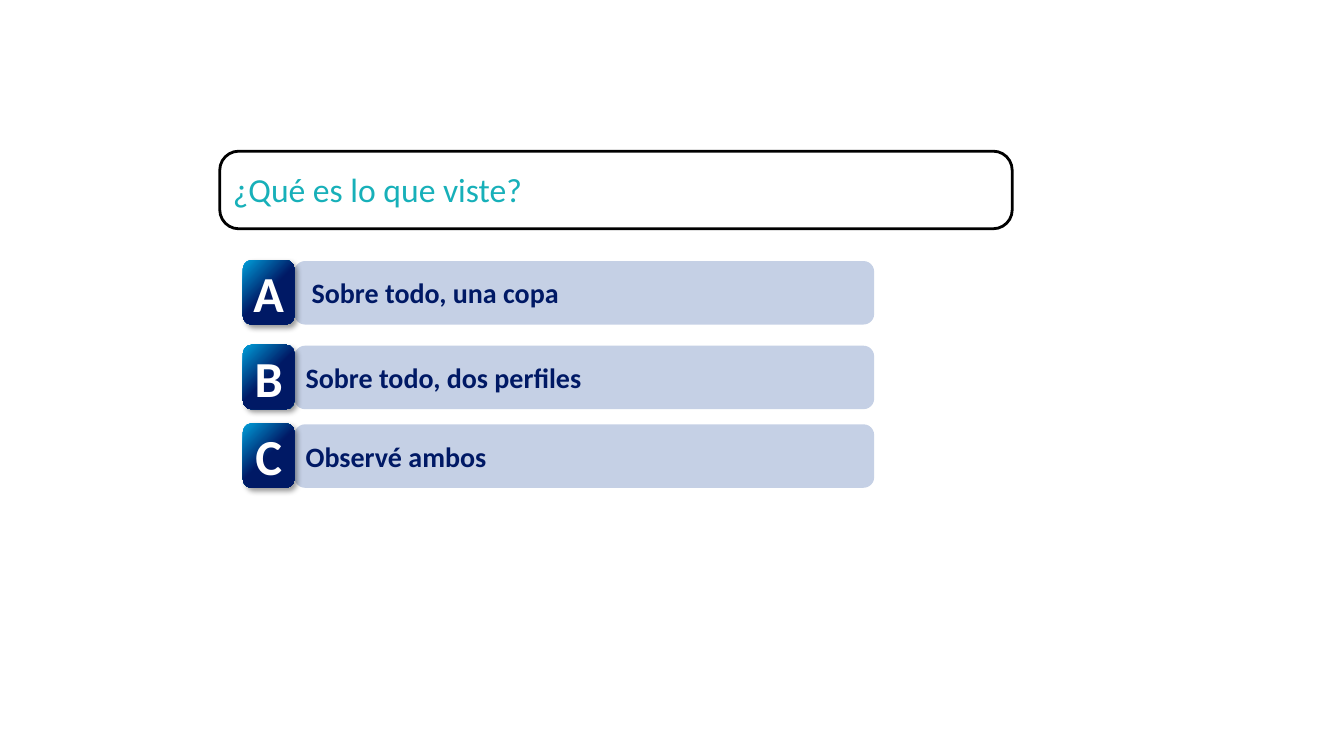
import pptx
import pptx.dml.color
import pptx.enum.shapes
import pptx.enum.text
import pptx.oxml
import pptx.oxml.ns
import pptx.util

INCH = pptx.util.Inches
ALIGN = pptx.enum.text.PP_ALIGN
NAVY = "001965"
ASK = {"size": pptx.util.Pt(24), "bold": False}
REPLY = {"size": pptx.util.Pt(20), "bold": True}
LETTER = {"size": pptx.util.Pt(36), "bold": True}
ROWS = [
    # letter, reply, top, left inset of the reply
    ("A", "Sobre todo, una copa", 2.58, 0.14),
    ("B", "Sobre todo, dos perfiles", 3.42, 0.08),
    ("C", "Observé ambos", 4.2, 0.08),
]
SHADOW = (
    '<a:effectLst %s><a:outerShdw blurRad="50800" dist="38100" dir="2700000" '
    'algn="tl" rotWithShape="0"><a:srgbClr val="000000"><a:alpha val="40000"/>'
    "</a:srgbClr></a:outerShdw></a:effectLst>" % pptx.oxml.ns.nsdecls("a")
)


def color(code):
    return pptx.dml.color.RGBColor.from_string(code)


def write(shape, text, look, code, align=ALIGN.LEFT, left=0):
    frame = shape.text_frame
    frame.text = text
    form = {
        "word_wrap": True,
        "auto_size": pptx.enum.text.MSO_AUTO_SIZE.NONE,
        "vertical_anchor": pptx.enum.text.MSO_ANCHOR.MIDDLE,
        "margin_left": INCH(left),
        "margin_right": 0,
        "margin_top": 0,
        "margin_bottom": 0,
    }
    for name, value in form.items():
        setattr(frame, name, value)
    para = frame.paragraphs[0]
    para.alignment = align
    font = para.runs[0].font
    for name, value in {"name": "Calibri", **look}.items():
        setattr(font, name, value)
    font.color.rgb = color(code)


def panel(slide, box, fill, curve=0.167):
    """Add a plain rounded rectangle without outline or shadow."""
    kind = pptx.enum.shapes.MSO_SHAPE.ROUNDED_RECTANGLE
    shape = slide.shapes.add_shape(kind, *map(INCH, box))
    shape.adjustments[0] = curve
    shape.shadow.inherit = False
    shape.fill.solid()
    shape.fill.fore_color.rgb = color(fill)
    shape.line.fill.background()
    return shape


def question(slide, box, text):
    frame = panel(slide, box, "FFFFFF", 0.245)
    frame.line.color.rgb = color("000000")
    frame.line.width = pptx.util.Pt(2)
    x, y, w, h = box
    title = slide.shapes.title
    place = (x + 0.05, y + 0.18, w - 0.1, 0.4)
    for name, value in zip(("left", "top", "width", "height"), place):
        setattr(title, name, INCH(value))
    write(title, text, ASK, "17B0B9", left=0.08)
    frame.element.addnext(title.element)


def tile(slide, box, text):
    shape = panel(slide, box, NAVY)
    shape.fill.gradient()
    shape.fill.gradient_angle = 315
    stops = zip(shape.fill.gradient_stops, (0, 0.5), ("009FDA", NAVY))
    for stop, place, code in stops:
        stop.position = place
        stop.color.rgb = color(code)
    props = shape.element.spPr
    plain = props.find(pptx.oxml.ns.qn("a:effectLst"))
    props.replace(plain, pptx.oxml.parse_xml(SHADOW))
    write(shape, text, LETTER, "FFFFFF", ALIGN.CENTER)


def answer(slide, box, letter, text, inset):
    x, y, w, h = box
    side = 0.51
    bar = panel(slide, (x + side, y + 0.01, w - side, h - 0.01), "C5D0E5")
    write(bar, text, REPLY, NAVY, left=inset)
    tile(slide, (x, y, side, h), letter)


def main():
    deck = pptx.Presentation()
    deck.slide_width, deck.slide_height = INCH(13.33), INCH(7.5)
    slide = deck.slides.add_slide(deck.slide_layouts[5])
    question(slide, (2.18, 1.5, 7.86, 0.77), "¿Qué es lo que viste?")
    for letter, text, top, inset in ROWS:
        answer(slide, (2.41, top, 6.26, 0.64), letter, text, inset)
    deck.save("out.pptx")


if __name__ == "__main__":
    main()
